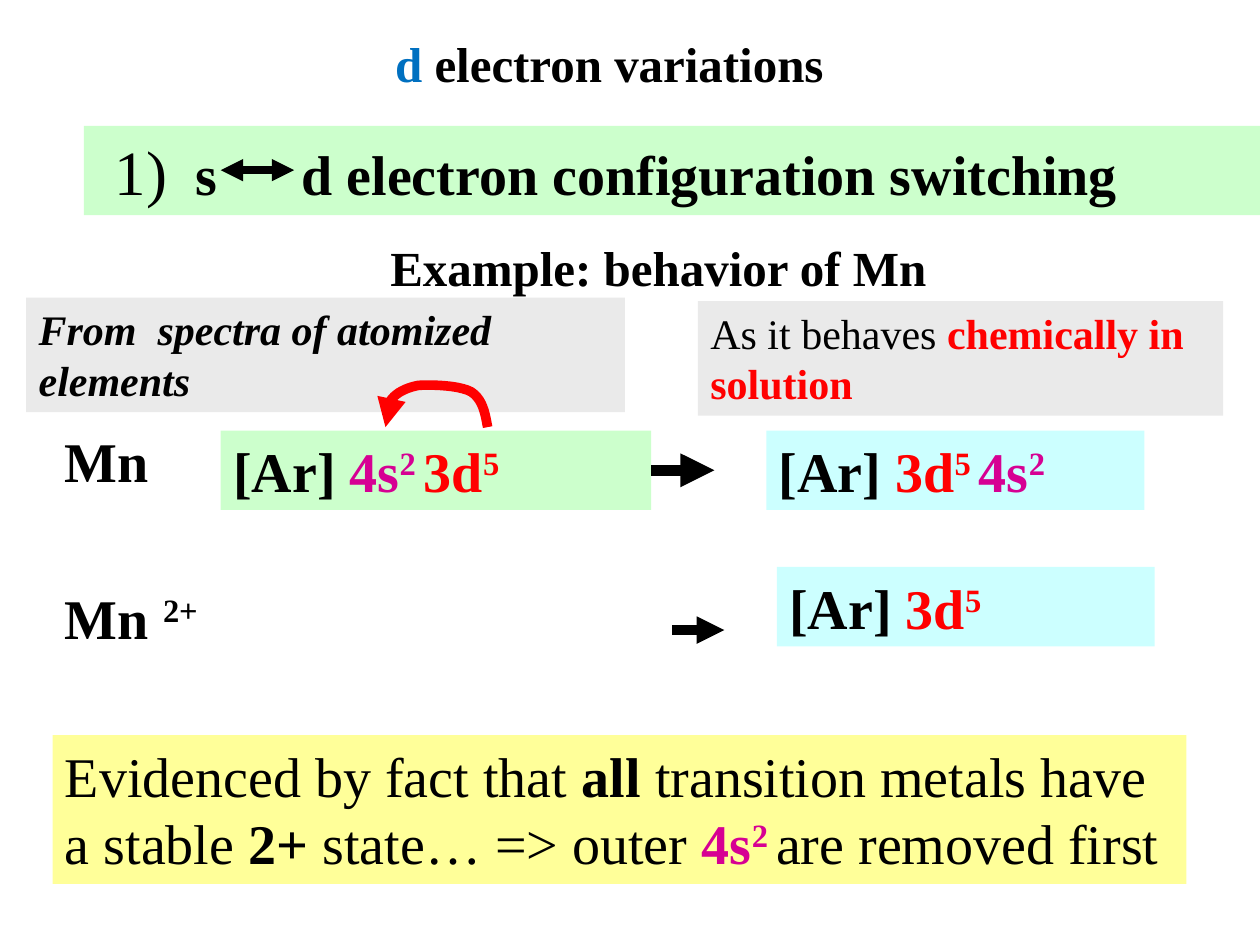
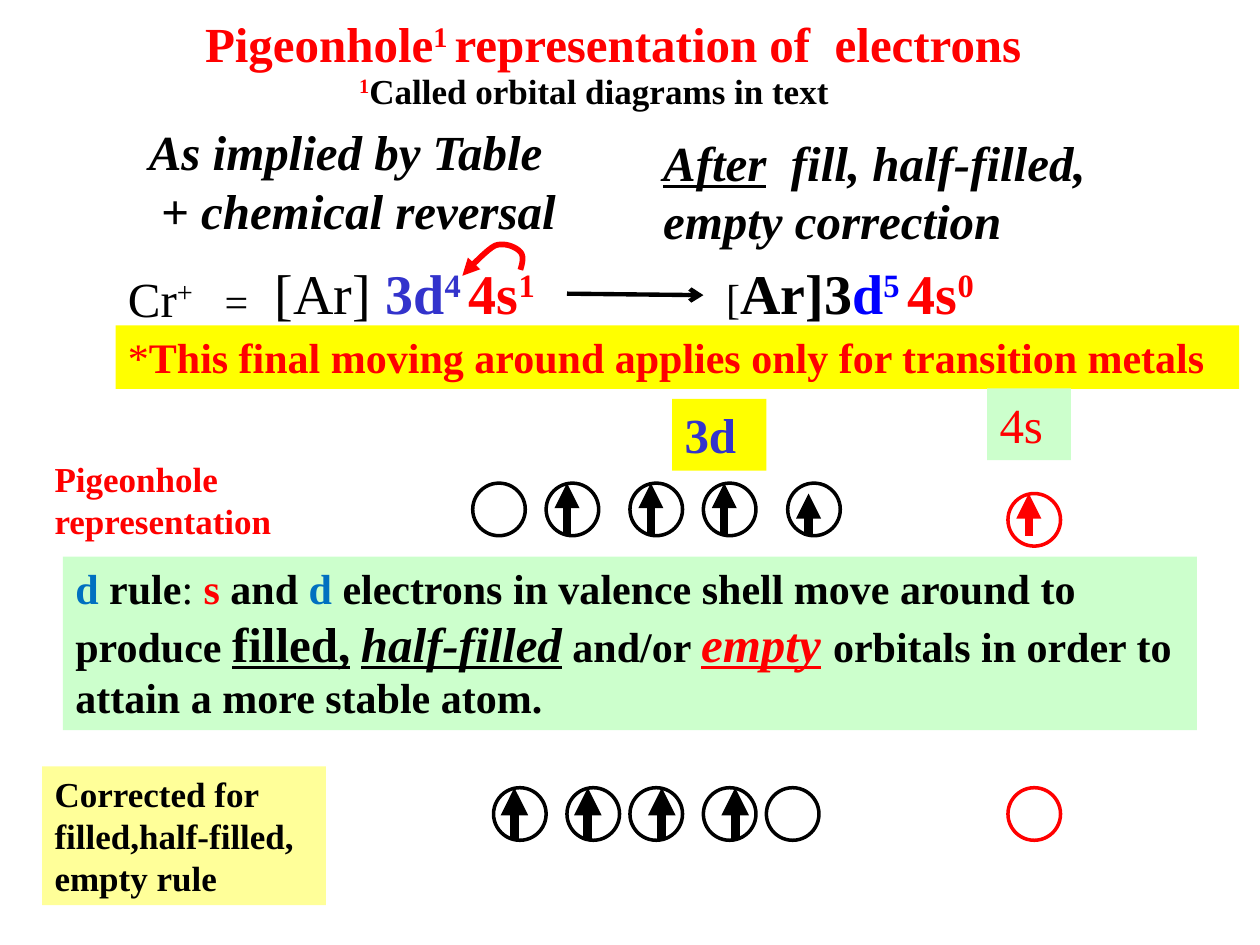
from dataclasses import dataclass
from functools import partial
from typing import NamedTuple, Optional

from lxml.etree import SubElement
from pptx import Presentation
from pptx.dml.color import RGBColor
from pptx.enum.shapes import MSO_CONNECTOR as Link, MSO_SHAPE as Form
from pptx.enum.text import MSO_ANCHOR as Anchor, MSO_AUTO_SIZE as Fit, PP_ALIGN as Align
from pptx.oxml.ns import qn
from pptx.util import Cm, Pt

# Shared look
FONT = "Times New Roman"
BLACK = RGBColor(0x00, 0x00, 0x00)
RED = RGBColor(0xFF, 0x00, 0x00)
PINK = RGBColor(0xD6, 0x00, 0x93)
SKY = RGBColor(0x00, 0x70, 0xC0)
INDIGO = RGBColor(0x33, 0x33, 0xCC)
BLUE = RGBColor(0x00, 0x00, 0xFF)
GREEN = RGBColor(0xCC, 0xFF, 0xCC)
AQUA = RGBColor(0xCC, 0xFF, 0xFF)
GREY = RGBColor(0xEA, 0xEA, 0xEA)
CREAM = RGBColor(0xFF, 0xFF, 0x99)
YELLOW = RGBColor(0xFF, 0xFF, 0x00)
RING = 1.06  # diameter of a pigeonhole, cm


class Bit(NamedTuple):
    """A stretch of text in one style."""
    text: str
    color: RGBColor = BLACK
    bold: bool = False
    sup: bool = False
    size: Optional[float] = None
    italic: bool = False
    under: bool = False


Bold = partial(Bit, bold=True)
Sup = partial(Bit, bold=True, sup=True)
Slant = partial(Bit, bold=True, italic=True)


@dataclass
class Note:
    """A text box; lengths in cm, one list of bits per paragraph."""
    left: float
    top: float
    width: float
    height: float
    size: float
    lines: list
    fill: Optional[RGBColor] = None
    inset: float = 0.25
    tabs: tuple = ()


@dataclass
class Arrow:
    """A straight arrow; lengths in cm, weight in points."""
    start: tuple
    end: tuple
    weight: float
    color: RGBColor = BLACK
    tail: str = "triangle"
    head: Optional[str] = None


@dataclass
class Hole:
    """A pigeonhole, with the offset and height of its spin if it has one."""
    left: float
    top: float
    spin: Optional[float] = None
    tall: float = RING
    color: RGBColor = BLACK


def write(para, bits: list, size: float) -> None:
    for bit in bits:
        run = para.add_run()
        run.text = bit.text
        font = run.font
        font.name, font.size = FONT, Pt(bit.size or size)
        font.bold, font.italic, font.underline = bit.bold, bit.italic, bit.under
        font.color.rgb = bit.color
        if bit.sup:
            run._r.get_or_add_rPr().set("baseline", "30000")


def set_tabs(para, stops: tuple) -> None:
    group = SubElement(para._p.get_or_add_pPr(), qn("a:tabLst"))
    for stop in stops:
        SubElement(group, qn("a:tab"), pos=str(Cm(stop)), algn="l")


def add_note(slide, note: Note):
    box = slide.shapes.add_textbox(
        Cm(note.left), Cm(note.top), Cm(note.width), Cm(note.height))
    if note.fill is not None:
        box.fill.solid()
        box.fill.fore_color.rgb = note.fill
    frame = box.text_frame
    frame.word_wrap = True
    frame.margin_left = Cm(note.inset)
    for i, bits in enumerate(note.lines):
        para = frame.add_paragraph() if i else frame.paragraphs[0]
        if note.tabs:
            set_tabs(para, note.tabs)
        write(para, bits, note.size)
    return box


def add_title(slide, left: float, top: float, width: float, height: float,
              bits: list, foot: float = 0.13) -> None:
    title = slide.shapes.title
    title.left, title.top = Cm(left), Cm(top)
    title.width, title.height = Cm(width), Cm(height)
    frame = title.text_frame
    frame.auto_size = Fit.NONE
    frame.vertical_anchor = Anchor.MIDDLE
    frame.margin_bottom = Cm(foot)
    para = frame.paragraphs[0]
    para.alignment = Align.CENTER
    write(para, bits, 28)


def set_line(shape, color: RGBColor, weight: float,
             tail: Optional[str] = None, head: Optional[str] = None) -> None:
    shape.line.color.rgb = color
    shape.line.width = Pt(weight)
    line = shape.element.spPr.find(qn("a:ln"))
    for tag, kind in (("a:headEnd", head), ("a:tailEnd", tail)):
        if kind:
            SubElement(line, qn(tag), type=kind)


def add_arrow(slide, arrow: Arrow):
    link = slide.shapes.add_connector(
        Link.STRAIGHT, *map(Cm, arrow.start + arrow.end))
    set_line(link, arrow.color, arrow.weight, arrow.tail, arrow.head)
    SubElement(link.element.spPr, qn("a:effectLst"))
    return link


def add_curve(slide, knots: list, weight: float, steps: int = 10) -> None:
    """Draw joined cubic curves: a start, then three points for each curve."""
    dots = []
    for i in range(0, len(knots) - 1, 3):
        a, b, c, d = knots[i:i + 4]
        for step in range(1, steps + 1):
            t = step / steps
            u = 1 - t
            dots.append(tuple(
                Cm(u**3 * p + 3 * u * u * t * q + 3 * u * t * t * r + t**3 * s)
                for p, q, r, s in zip(a, b, c, d)))
    pen = slide.shapes.build_freeform(*map(Cm, knots[0]), scale=1.0)
    pen.add_line_segments(dots, close=False)
    curve = pen.convert_to_shape()
    curve.shadow.inherit = False
    curve.fill.background()
    set_line(curve, RED, weight, "triangle")


def add_hole(slide, hole: Hole, weight: float) -> None:
    if hole.spin is not None:
        x, base = hole.left + hole.spin, hole.top + hole.tall
        add_arrow(slide, Arrow((x, base), (x, hole.top), weight, hole.color)
                  if hole.tall < RING and hole.color == RED else
                  Arrow((x, hole.top + RING), (x, hole.top + RING - hole.tall),
                        weight, hole.color))
    ring = slide.shapes.add_shape(
        Form.OVAL, Cm(hole.left), Cm(hole.top), Cm(RING), Cm(RING))
    ring.shadow.inherit = False
    ring.fill.background()
    set_line(ring, hole.color, 2)


def switch_slide(slide) -> None:
    add_title(slide, 0.64, 0, 23.29, 2.54,
              [Bold("d ", SKY), Bold("electron variations")])
    core = Bold("[Ar] ")
    shell_d = [Bold("3d", RED), Sup("5", RED)]
    shell_s = [Bold("4s", PINK), Sup("2", PINK)]
    gap = Sup(" ")

    # Heading, captions and conclusion
    notes = [
        Note(1.69, 2.54, 23.81, 1.8, 32,
             [[Bit("1)", size=36),
               Bold("\ts\td electron configuration switching")]],
             GREEN, inset=0.62, tabs=(1.63, 3.77)),
        Note(7.62, 4.66, 12.7, 1.45, 28, [[Bold("Example: behavior of Mn")]]),
        Note(0.53, 6, 12.07, 2.31, 24,
             [[Slant("From  spectra of atomized elements")]], GREY),
        Note(14.07, 6.07, 10.59, 2.31, 24,
             [[Bit("As it behaves "), Bold("chemically in solution", RED)]], GREY),
        Note(1.06, 14.82, 22.86, 3, 32,
             [[Bit("Evidenced by fact that "), Bold("all "),
               Bit("transition metals have a stable "), Bold("2+ "),
               Bit("state… => outer "), *shell_s, gap,
               Bit("are removed first")]], CREAM),
        # Atom and ion
        Note(1.06, 8.47, 3.18, 1.6, 32, [[Bold("Mn")]]),
        Note(1.06, 11.64, 3.28, 1.6, 32, [[Bold("Mn "), Sup("2+")]]),
        Note(15.45, 8.68, 7.62, 1.6, 32, [[core, *shell_d, gap, *shell_s]], AQUA),
        Note(15.66, 11.43, 7.62, 1.6, 32, [[core, *shell_d]], AQUA),
    ]
    for note in notes:
        add_note(slide, note)
    atom = add_note(slide, Note(4.45, 8.68, 8.68, 1.6, 32,
                                [[core, *shell_s, gap, *shell_d]], GREEN))

    # Arrows
    link = add_arrow(slide, Arrow((13.13, 9.48), (14.4, 9.48), 6.5))
    link.begin_connect(atom, 3)
    add_arrow(slide, Arrow((13.55, 12.7), (14.6, 12.7), 5.25))
    add_arrow(slide, Arrow((4.45, 3.43), (5.93, 3.43), 4.25, head="triangle"))
    add_curve(slide, [(9.83, 8.61), (9.78, 8.33), (9.73, 8.05), (9.5, 7.9),
                      (9.27, 7.77), (8.71, 7.75), (8.43, 7.77),
                      (8.18, 7.82), (7.98, 7.92), (7.87, 8.08),
                      (7.75, 8.2), (7.77, 8.61), (7.77, 8.61)], 5.5)


def hole_slide(slide) -> None:
    add_title(slide, 1.69, -0.42, 21.59, 3.18,
              [Bold("Pigeonhole", RED), Sup("1 ", RED),
               Bold("representation of  electrons ", RED)], foot=0.74)

    notes = [
        # Captions and configurations
        Note(6.99, 1.27, 12.07, 1.11, 20,
             [[Sup("1", RED), Bold("Called orbital diagrams in text")]]),
        Note(2.75, 2.33, 9.31, 2.64, 28,
             [[Slant("As implied by Table")], [Slant(" + chemical reversal")]]),
        Note(13.12, 2.54, 10.8, 2.64, 28,
             [[Slant("After", under=True),
               Slant("  fill, half-filled, empty correction")]]),
        Note(2.33, 5.29, 4.02, 1.45, 28,
             [[Bit("Cr"), Bit("+", sup=True), Bit("\t=", size=24)]], tabs=(1.95,)),
        Note(5.29, 5.08, 5.93, 1.62, 32,
             [[Bit("[Ar] "), Bold("3d", INDIGO), Sup("4 ", INDIGO),
               Bold("4s", RED), Sup("1", RED)]]),
        Note(14.39, 5.08, 8.04, 1.62, 32,
             [[Bit("[", size=24), Bold("Ar]3"), Bold("d", BLUE), Sup("5 ", BLUE),
               Bold("4s", RED), Sup("0", RED)]]),
        Note(2.33, 6.56, 22.65, 1.28, 24,
             [[Bit("*", RED),
               Bold("This final moving around applies only for transition metals",
                    RED)]], YELLOW),
        # Labels of the diagrams
        Note(19.9, 7.83, 1.69, 1.45, 28, [[Bit("4s", RED)]], GREEN),
        Note(13.55, 8.04, 1.9, 1.45, 28, [[Bold("3d", INDIGO)]], YELLOW),
        Note(0.85, 9.1, 5.08, 3.23, 20, [[Bold("Pigeonhole representation", RED)]]),
        Note(0.85, 15.45, 5.72, 2.8, 20,
             [[Bold("Corrected for filled,half-filled, empty rule")]], CREAM),
        # Rule
        Note(1.27, 11.22, 22.86, 3.5, 24,
             [[Bold("d", SKY), Bold(" rule"), Bit(": "), Bold("s", RED),
               Bold(" and "), Bold("d", SKY),
               Bold(" electrons in valence shell move around to produce "),
               Bold("filled,", size=28, under=True), Bold(" "),
               Slant("half-filled", size=28, under=True), Bold(" and/or "),
               Slant("empty", RED, size=28, under=True), Bold(" ", size=28),
               Bold("orbitals in order to attain a more stable atom.")]], GREEN),
    ]
    for note in notes:
        add_note(slide, note)

    # Pigeonholes before and after the correction
    first, last = 9.74, 15.88
    before = [Hole(9.53, first), Hole(11.01, first, 0.42), Hole(12.7, first, 0.42),
              Hole(14.18, first, 0.42), Hole(15.88, first, 0.42, 0.85),
              Hole(20.32, 9.95, 0.42, 0.85, RED)]
    after = [Hole(9.95, last, 0.42), Hole(11.43, last, 0.42), Hole(12.7, last, 0.64),
             Hole(14.18, last, 0.64), Hole(15.45, last), Hole(20.32, last, color=RED)]
    for row, weight in ((before, 4.75), (after, 5.25)):
        for hole in row:
            add_hole(slide, hole, weight)

    # Arrows
    add_arrow(slide, Arrow((11.43, 5.92), (14.18, 5.95), 2.5, tail="arrow"))
    add_curve(slide, [(10.49, 5.44), (10.54, 5.28), (10.57, 5.13), (10.46, 5.05),
                      (10.39, 4.98), (10.16, 4.88), (9.98, 4.95),
                      (9.78, 5.05), (9.32, 5.56), (9.32, 5.56)], 3.25)


def main() -> None:
    deck = Presentation()
    deck.slide_width, deck.slide_height = Cm(25.4), Cm(19.05)
    plain = deck.slide_layouts[5]  # title only
    for draw in (switch_slide, hole_slide):
        draw(deck.slides.add_slide(plain))
    deck.save("out.pptx")


if __name__ == "__main__":
    main()
